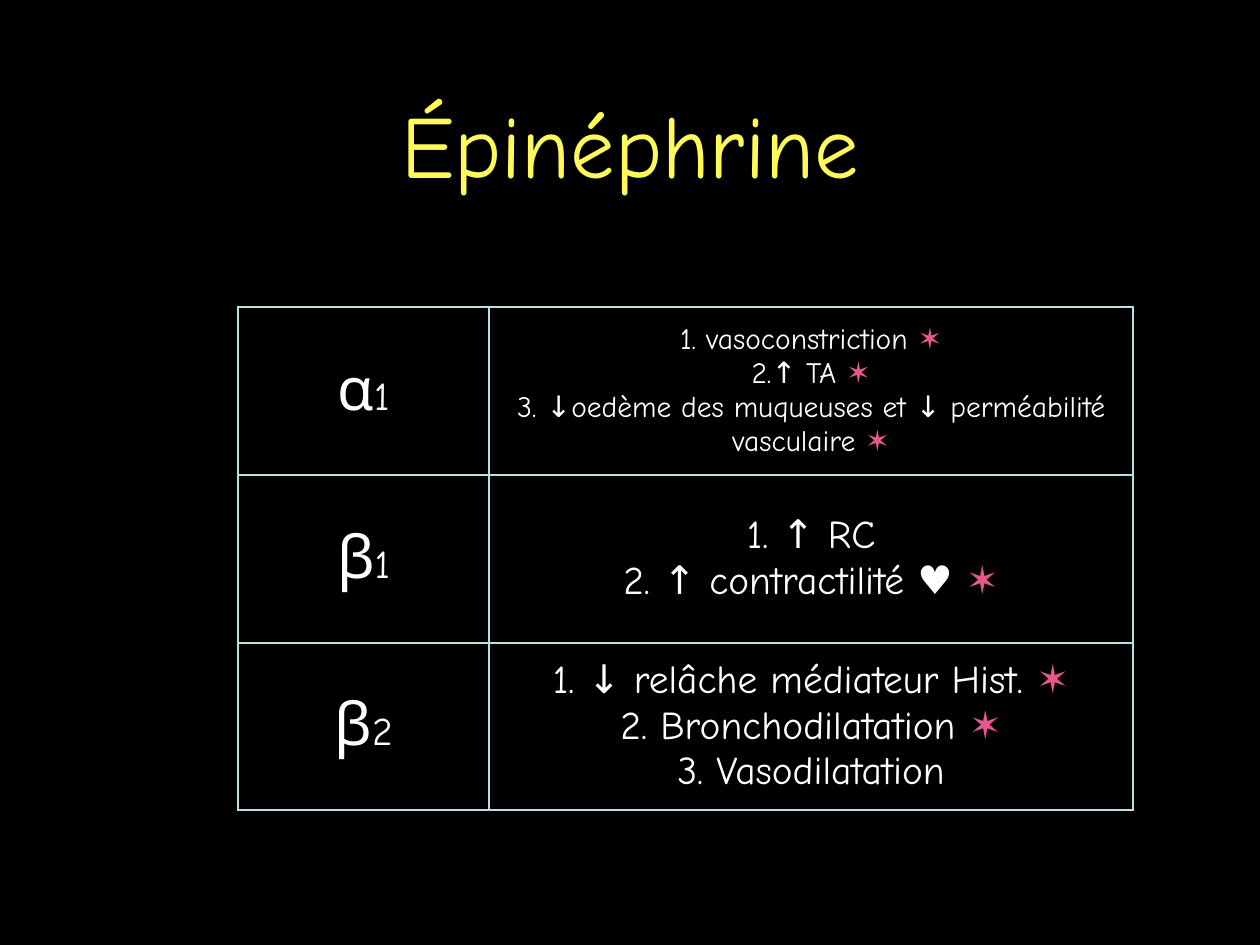
from lxml import etree
from pptx import Presentation
from pptx.dml.color import RGBColor
from pptx.enum.text import MSO_ANCHOR, PP_ALIGN
from pptx.oxml.ns import qn
from pptx.util import Inches, Pt

CENTER = PP_ALIGN.CENTER
MIDDLE = MSO_ANCHOR.MIDDLE
FONT = "Comic Neue"
COLORS = {
    "background": "000000",
    "title": "FFF959",
    "text": "FFFFFF",
    "star": "E6578D",
    "border": "BBE0E3",
}
STAR = "✶"
MARGIN = Inches(0.06)
RECEPTORS = [
    ("α", "1", 24, [
        "1. vasoconstriction ✶",
        "2.↑ TA ✶",
        "3. ↓oedème des muqueuses et ↓ perméabilité vasculaire ✶",
    ]),
    ("β", "1", 32, ["1. ↑ RC", "2. ↑ contractilité ♥ ✶"]),
    ("β", "2", 32, [
        "1. ↓ relâche médiateur Hist. ✶",
        "2. Bronchodilatation ✶",
        "3. Vasodilatation",
    ]),
]


def rgb(name):
    return RGBColor.from_string(COLORS[name])


def add_run(p, text, size=32, color="text"):
    p.alignment = CENTER
    r = p.add_run()
    r.text = text
    r.font.name = FONT
    r.font.size = Pt(size)
    r.font.color.rgb = rgb(color)


def set_borders(cell, width=2):
    tcPr = cell._tc.get_or_add_tcPr()
    for side in ("lnL", "lnR", "lnT", "lnB"):
        ln = etree.SubElement(tcPr, qn(f"a:{side}"), w=str(Pt(width)))
        fill = etree.SubElement(ln, qn("a:solidFill"))
        etree.SubElement(fill, qn("a:srgbClr"), val=COLORS["border"])


def format_cell(cell):
    cell.vertical_anchor = MIDDLE
    cell.margin_left = cell.margin_right = MARGIN
    cell.margin_top = cell.margin_bottom = MARGIN
    set_borders(cell)
    cell.fill.solid()
    cell.fill.fore_color.rgb = rgb("background")


def fill_effects(tf, effects, size):
    for i, effect in enumerate(effects):
        p = tf.paragraphs[0] if i == 0 else tf.add_paragraph()
        text, star, _ = effect.partition(STAR)
        add_run(p, text, size=size)
        if star:
            add_run(p, star, size=size, color="star")


def add_title(s, text, left, top, width, height):
    sp = s.shapes.add_textbox(Inches(left), Inches(top), Inches(width), Inches(height))
    tf = sp.text_frame
    tf.word_wrap = True
    tf.vertical_anchor = MIDDLE
    tf.margin_left = tf.margin_right = MARGIN
    tf.margin_top = tf.margin_bottom = MARGIN
    add_run(tf.paragraphs[0], text, size=72, color="title")


def add_receptor_table(s, left, top, width, height, label_width):
    frame = s.shapes.add_table(len(RECEPTORS), 2, Inches(left), Inches(top),
                               Inches(width), Inches(height))
    table = frame.table
    table.first_row = False
    table.horz_banding = False
    table.columns[0].width = Inches(label_width)
    table.columns[1].width = Inches(width - label_width)
    for row, (letter, number, size, effects) in zip(table.rows, RECEPTORS):
        label, detail = row.cells
        format_cell(label)
        format_cell(detail)
        p = label.text_frame.paragraphs[0]
        add_run(p, letter, size=48)
        add_run(p, number)
        fill_effects(detail.text_frame, effects, size)


def main():
    prs = Presentation()
    prs.slide_width = Inches(14.22)
    prs.slide_height = Inches(10.67)
    s = prs.slides.add_slide(prs.slide_layouts[6])
    s.background.fill.solid()
    s.background.fill.fore_color.rgb = rgb("background")
    add_title(s, "Épinéphrine", 1.39, 0.22, 11.44, 2.78)
    add_receptor_table(s, 2.69, 3.47, 10.1, 5.68, label_width=2.83)
    prs.save("out.pptx")


if __name__ == "__main__":
    main()
